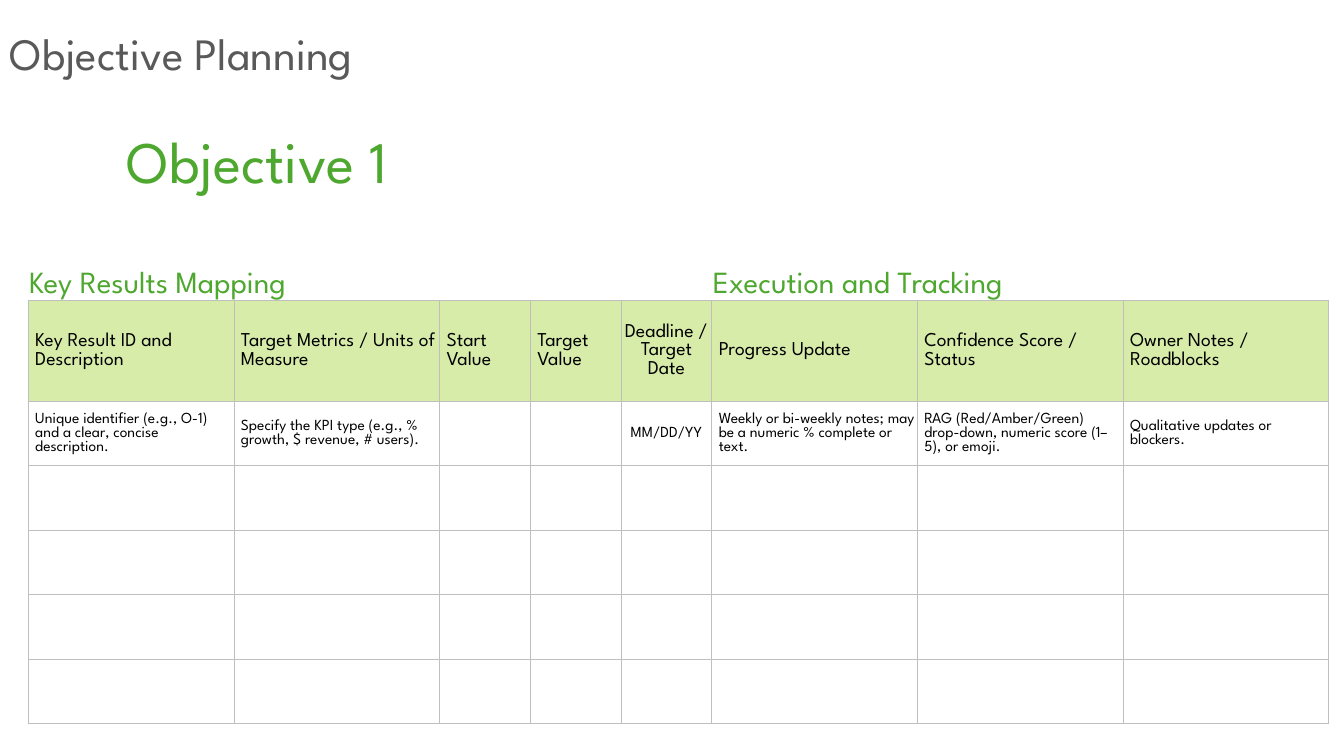
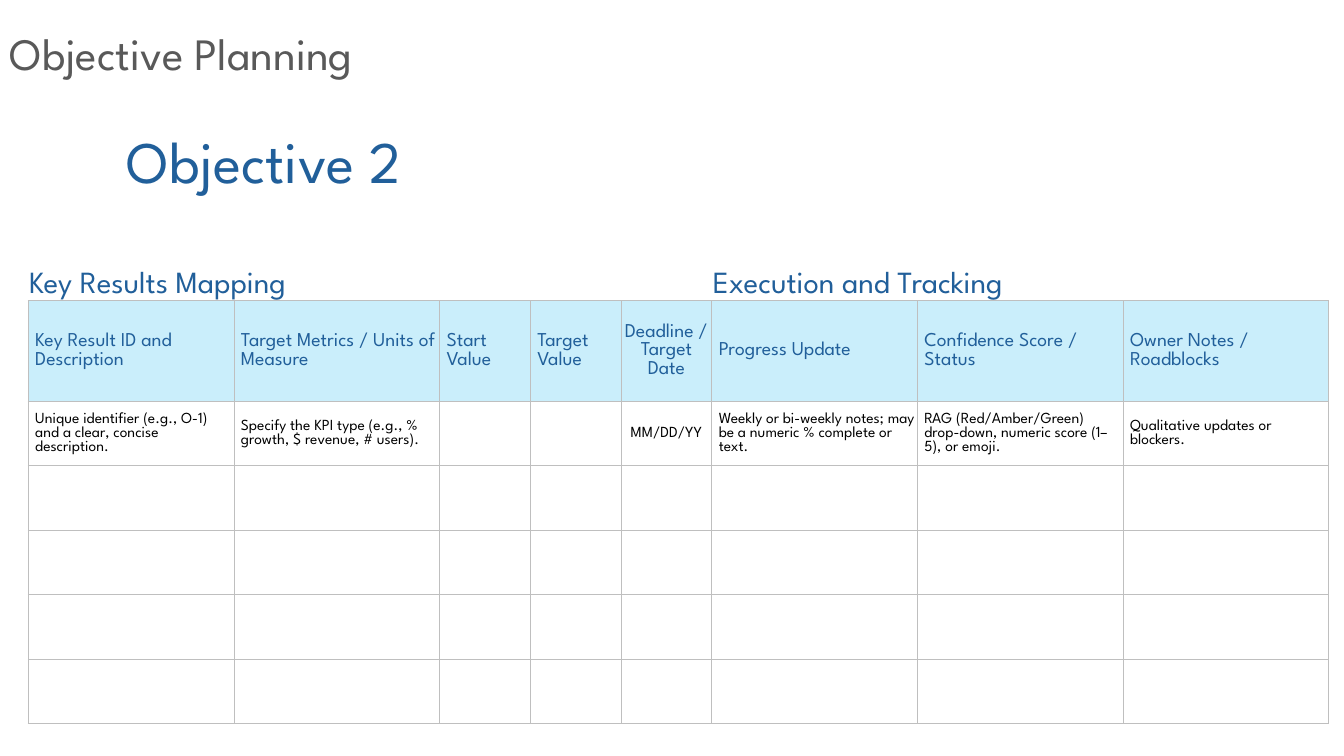
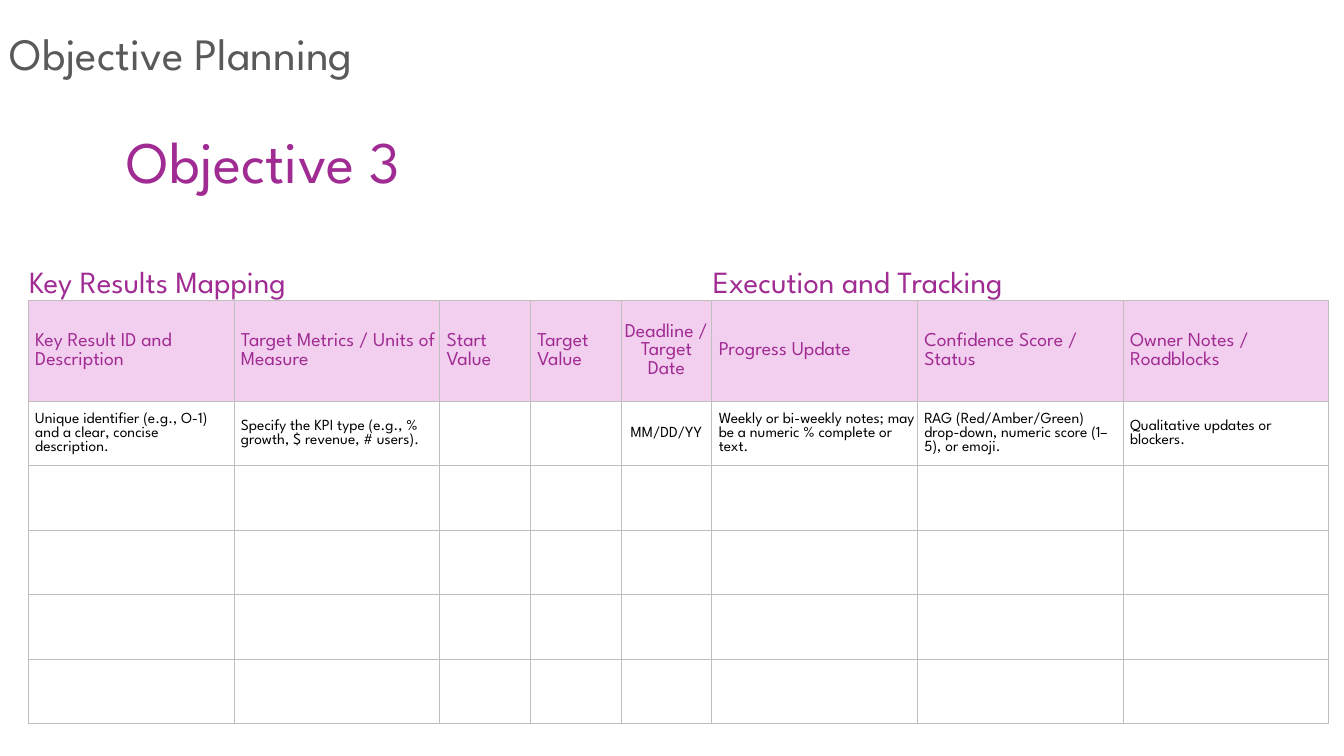
from lxml import etree
from pptx import Presentation
from pptx.dml.color import RGBColor
from pptx.enum import text as t
from pptx.oxml import ns
from pptx.util import Inches, Pt

FONT = "League Spartan"
GRAY = RGBColor(0x59, 0x59, 0x59)
BLACK = RGBColor(0x00, 0x00, 0x00)
BORDER = RGBColor(0xBF, 0xBF, 0xBF)
GREEN = RGBColor(0x4E, 0xA7, 0x2E)
LIGHT_GREEN = RGBColor(0xD8, 0xEC, 0xAA)
BLUE = RGBColor(0x21, 0x5F, 0x9A)
LIGHT_BLUE = RGBColor(0xCA, 0xEE, 0xFB)
PURPLE = RGBColor(0xA0, 0x2B, 0x93)
LIGHT_PURPLE = RGBColor(0xF2, 0xCF, 0xEE)

# Accent, header fill and header text of each objective
THEMES = [
    (GREEN, LIGHT_GREEN, BLACK),
    (BLUE, LIGHT_BLUE, BLUE),
    (PURPLE, LIGHT_PURPLE, PURPLE),
]

WIDE, NARROW = 2.04, 0.9
COLUMN_WIDTHS = [WIDE] * 2 + [NARROW] * 3 + [WIDE] * 3
ROW_HEIGHTS = [0.64, 1] + [0.64] * 5
DEADLINE_COLUMN = 4
SECTIONS = {0: "Key Results Mapping", 5: "Execution and Tracking"}
HEADERS = [
    "Key Result ID and Description",
    "Target Metrics / Units of Measure",
    "Start Value",
    "Target Value",
    "Deadline / Target Date",
    "Progress Update",
    "Confidence Score / Status",
    "Owner Notes / Roadblocks",
]
GUIDANCE = [
    "Unique identifier (e.g., O-1) and a clear, concise description.",
    "Specify the KPI type (e.g., % growth, $ revenue, # users).",
    "",
    "",
    "MM/DD/YY",
    "Weekly or bi-weekly notes; may be a numeric % complete or text.",
    "RAG (Red/Amber/Green) drop-down, numeric score (1–5), or emoji.",
    "Qualitative updates or blockers.",
]


def write(frame, text, size, color, align=t.PP_ALIGN.LEFT):
    para = frame.paragraphs[0]
    para.alignment = align
    span = para.add_run()
    span.text = text
    span.font.name = FONT
    span.font.size = Pt(size)
    span.font.color.rgb = color


def set_borders(cell, visible):
    """Draw the listed sides (of L, R, T, B) and clear the others."""
    properties = cell._tc.get_or_add_tcPr()
    for position, side in enumerate("LRTB"):
        line = etree.Element(ns.qn("a:ln" + side), w=str(Pt(0.5)))
        if side in visible:
            fill = etree.SubElement(line, ns.qn("a:solidFill"))
            etree.SubElement(fill, ns.qn("a:srgbClr"), val=str(BORDER))
        else:
            etree.SubElement(line, ns.qn("a:noFill"))
        properties.insert(position, line)


deck = Presentation()
deck.slide_width = Inches(13.33)
deck.slide_height = Inches(7.5)

for number, (accent, header_fill, header_color) in enumerate(THEMES, start=1):
    page = deck.slides.add_slide(deck.slide_layouts[6])

    headings = [
        ("Objective Planning", 32, GRAY, (0, 0.21, 13.33, 0.64)),
        (f"Objective {number}", 42, accent, (1.16, 1.19, 3.77, 0.81)),
    ]
    for text, size, color, place in headings:
        box = page.shapes.add_textbox(*map(Inches, place))
        box.text_frame.word_wrap = True
        box.text_frame.auto_size = t.MSO_AUTO_SIZE.SHAPE_TO_FIT_TEXT
        write(box.text_frame, text, size, color)

    table = page.shapes.add_table(
        len(ROW_HEIGHTS), len(COLUMN_WIDTHS), Inches(0.28), Inches(2.34),
        Inches(sum(COLUMN_WIDTHS)), Inches(sum(ROW_HEIGHTS))).table
    table.first_row = False
    table.horz_banding = False
    for column, width in zip(table.columns, COLUMN_WIDTHS):
        column.width = Inches(width)
    for row, height in zip(table.rows, ROW_HEIGHTS):
        row.height = Inches(height)

    for r, row in enumerate(table.rows):
        for c, cell in enumerate(row.cells):
            cell.fill.background()
            set_borders(cell, "B" if r == 0 else "LRTB")
            cell.margin_left = Inches(0.01 if r == 0 or c == DEADLINE_COLUMN else 0.07)
            cell.margin_right = cell.margin_top = Inches(0.01)
            cell.margin_bottom = 0
            cell.vertical_anchor = t.MSO_ANCHOR.MIDDLE

    for c, text in SECTIONS.items():
        cell = table.cell(0, c)
        cell.merge(table.cell(0, c + 1))
        cell.vertical_anchor = t.MSO_ANCHOR.BOTTOM
        write(cell.text_frame, text, 22, accent)

    for c, (header, guidance) in enumerate(zip(HEADERS, GUIDANCE)):
        align = t.PP_ALIGN.CENTER if c == DEADLINE_COLUMN else t.PP_ALIGN.LEFT
        cell = table.cell(1, c)
        cell.fill.solid()
        cell.fill.fore_color.rgb = header_fill
        write(cell.text_frame, header, 14, header_color, align)
        if guidance:
            write(table.cell(2, c).text_frame, guidance, 11, BLACK, align)

deck.save("out.pptx")
